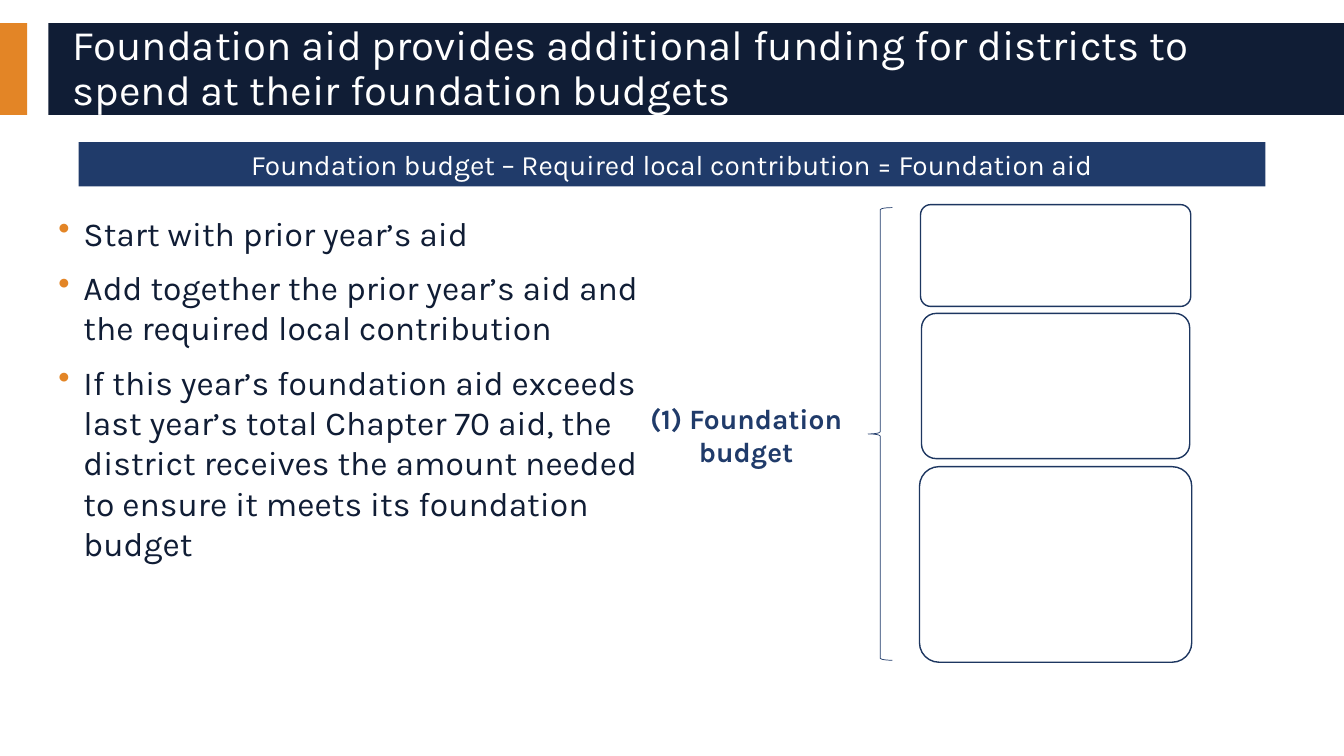
from lxml import etree
from pptx import Presentation
from pptx.dml.color import RGBColor
from pptx.enum.shapes import MSO_SHAPE
from pptx.enum.text import MSO_ANCHOR, PP_ALIGN
from pptx.oxml.ns import qn
from pptx.util import Inches, Pt

RECT, ROUNDED, BRACE = MSO_SHAPE.RECTANGLE, MSO_SHAPE.ROUNDED_RECTANGLE, MSO_SHAPE.LEFT_BRACE
MIDDLE, TOP = MSO_ANCHOR.MIDDLE, MSO_ANCHOR.TOP
LEFT, CENTER = PP_ALIGN.LEFT, PP_ALIGN.CENTER
COLORS = {"orange": "E38526", "navy": "101D35", "blue": "203B6A", "outline": "1D3660", "white": "FFFFFF"}

deck = Presentation()
deck.slide_width, deck.slide_height = Inches(13.33), Inches(7.5)
slide = deck.slides.add_slide(deck.slide_layouts[5])


def add_block(kind, box, fill=None, line=None, width=1):
    block = slide.shapes.add_shape(kind, *map(Inches, box))
    block.shadow.inherit = False
    if fill:
        block.fill.solid()
        block.fill.fore_color.rgb = RGBColor.from_string(COLORS[fill])
    else:
        block.fill.background()
    if line:
        block.line.color.rgb = RGBColor.from_string(COLORS[line])
        block.line.width = Pt(width)
    else:
        block.line.fill.background()
    return block


def write(holder, lines, size, color, align=LEFT, anchor=TOP, bold=False):
    frame = holder.text_frame
    frame.word_wrap = True
    frame.vertical_anchor = anchor
    frame.text = "\n".join(lines)
    for paragraph in frame.paragraphs:
        paragraph.alignment = align
        paragraph.font.name = "Karla"
        paragraph.font.size = Pt(size)
        paragraph.font.bold = bold
        paragraph.font.color.rgb = RGBColor.from_string(COLORS[color])
    return frame.paragraphs


add_block(RECT, (0, 0.23, 0.27, 0.91), "orange")
banner = add_block(RECT, (0.48, 0.23, 12.85, 0.91), "navy")

title = slide.shapes.title
title.left, title.top, title.width, title.height = map(Inches, (0.62, 0.32, 12.5, 0.74))
banner._element.addnext(title._element)
headline = "Foundation aid provides additional funding for districts to spend at their foundation budgets"
write(title, [headline], 30, "white", anchor=MIDDLE)[0].line_spacing = 0.9

steps = slide.shapes.add_textbox(*map(Inches, (0.48, 2.06, 5.96, 4.49)))
step_lines = [
    "Start with prior year’s aid",
    "Add together the prior year’s aid and the required local contribution",
    "If this year’s foundation aid exceeds last year’s total Chapter 70 aid, the district "
    "receives the amount needed to ensure it meets its foundation budget",
]
for step in write(steps, step_lines, 24, "navy"):
    step.space_before = Pt(10)
    properties = step._p.get_or_add_pPr()
    properties.set("marL", str(Inches(0.25)))
    properties.set("indent", str(-Inches(0.25)))
    bullet_color = etree.Element(qn("a:buClr"))
    etree.SubElement(bullet_color, qn("a:srgbClr"), val=COLORS["orange"])
    bullet = etree.Element(qn("a:buChar"), char="•")
    defaults = properties.find(qn("a:defRPr"))
    defaults.addprevious(bullet_color)
    defaults.addprevious(bullet)

for box in ((9.12, 4.63, 2.7, 1.94), (9.14, 3.11, 2.66, 1.44), (9.13, 2.03, 2.68, 1.01)):
    add_block(ROUNDED, box, "white", "outline").adjustments[0] = 0.1

formula = add_block(RECT, (0.78, 1.41, 11.77, 0.44), "blue")
write(formula, ["Foundation budget – Required local contribution = Foundation aid"], 20, "white", CENTER, MIDDLE)

add_block(BRACE, (8.61, 2.06, 0.24, 4.49), line="blue", width=0.5)
budget_label = slide.shapes.add_textbox(*map(Inches, (6.31, 3.93, 2.18, 0.77)))
write(budget_label, ["(1) Foundation budget"], 20, "blue", CENTER, bold=True)

deck.save("out.pptx")
